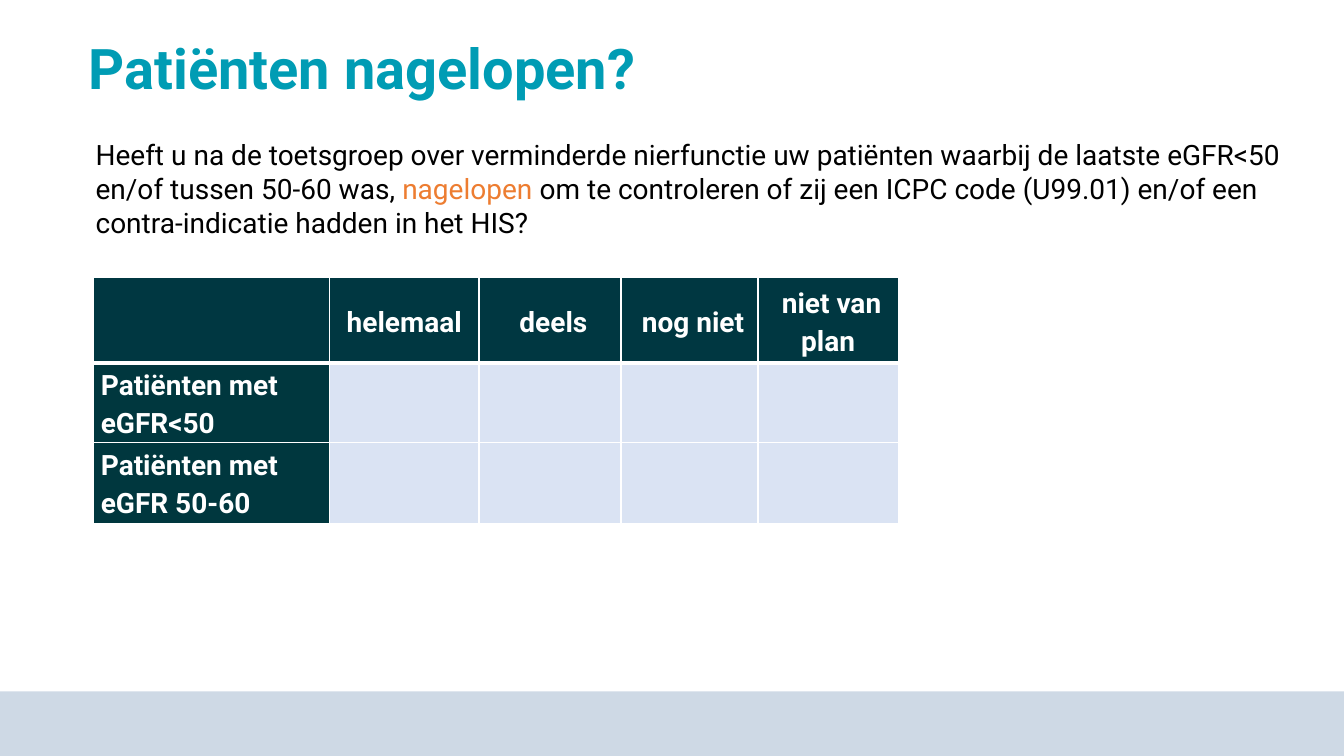
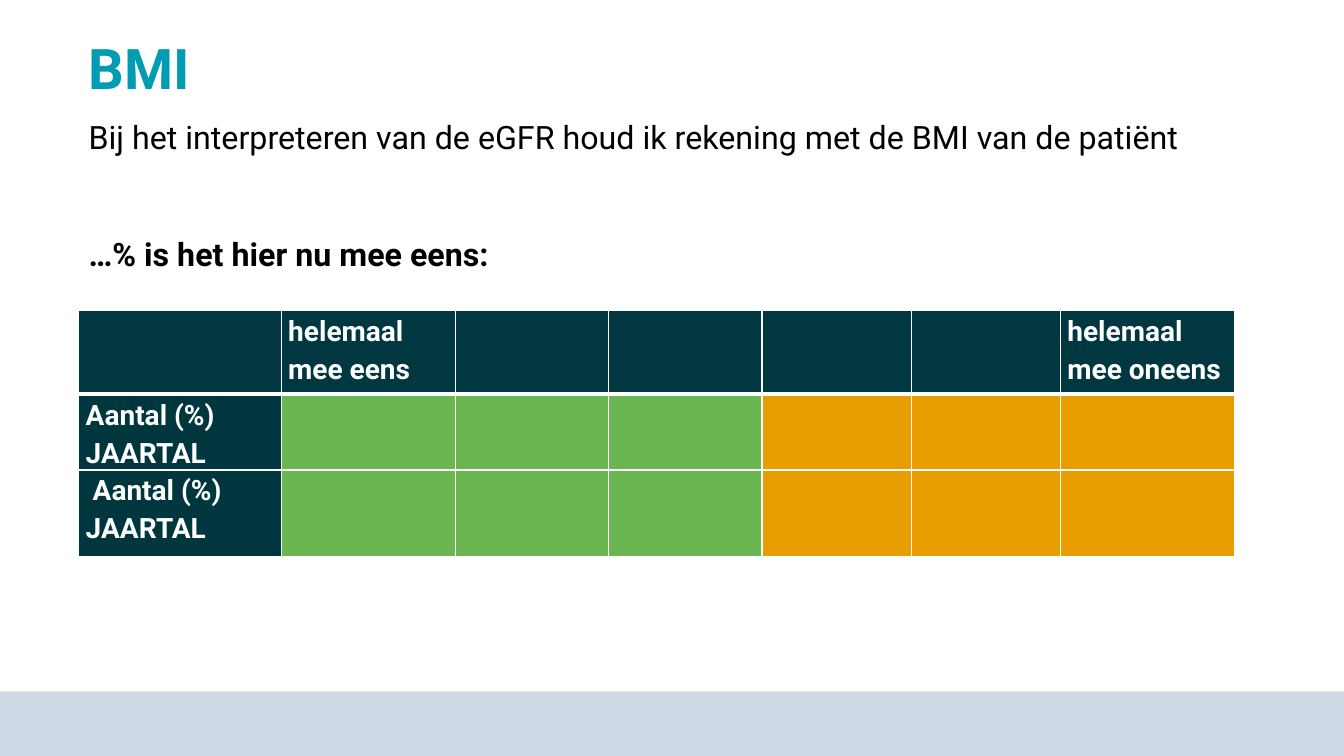
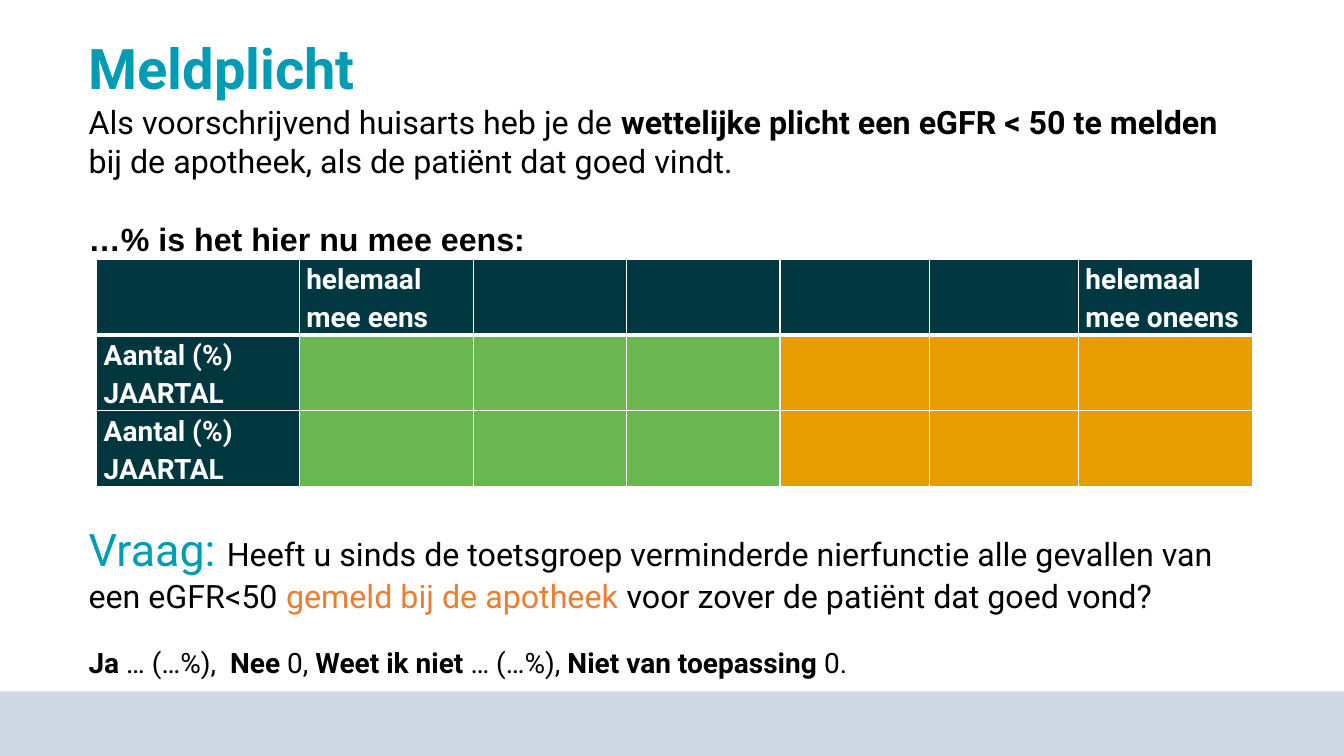
from pptx import Presentation
from pptx.dml.color import RGBColor as RGB
from pptx.enum.shapes import MSO_SHAPE as SHAPE
from pptx.enum.text import MSO_ANCHOR as ANCHOR, MSO_AUTO_SIZE as AUTO_SIZE, PP_ALIGN as ALIGN
from pptx.oxml import parse_xml
from pptx.oxml.ns import nsdecls
from pptx.util import Pt

COLORS = {
    "title": "009CB4", "band": "CED9E5", "header": "003741", "row_label": "00373E",
    "empty": "DAE3F3", "agree": "6AB650", "disagree": "E89E00",
    "accent": "ED7D31", "text": "000000", "white": "FFFFFF",
}
TITLE = {"size": Pt(40), "bold": True, "color": "title"}
CELL = {"size": Pt(20), "bold": True, "color": "white"}
BODY = {"size": Pt(23)}
SMALL = {"size": Pt(20)}
BOLD = {"bold": True}
ACCENT = {"color": "accent"}

# Shared parts of the tables
SCALE_WIDTHS = [144.7, 124.6, 109.4, 109.4, 106.6, 106.6, 124.6]
SCALE_HEADER = ["", "helemaal mee eens", "", "", "", "", "helemaal mee oneens"]
SCALE_FILLS = ["agree"] * 3 + ["disagree"] * 3
COUNT_LABEL = "Aantal (%)\nJAARTAL"

# Each text block: place, anchor, base format, paragraphs of (space before, runs)
SLIDES = [
    {
        "title": "Patiënten nagelopen?",
        "table": {
            "at": (67, 198), "widths": [168.5, 106.6, 101.5, 97.9, 100.1],
            "heights": [61.2, 56.9, 57.6], "anchor": ANCHOR.MIDDLE, "header_align": ALIGN.CENTER,
            "header": ["", "helemaal", " deels", " nog niet", " niet van plan"],
            "labels": ["Patiënten met eGFR<50", "Patiënten met eGFR 50-60"],
            "fills": ["empty"] * 4,
        },
        "texts": [((61.2, 95, 863.3, 80), ANCHOR.TOP, SMALL, [
            (0, [("Heeft u na de toetsgroep over verminderde nierfunctie uw patiënten waarbij de "
                  "laatste eGFR<50 en/of tussen 50-60 was, ", {}),
                 ("nagelopen ", ACCENT),
                 ("om te controleren of zij een ICPC code (U99.01) en/of een contra-indicatie "
                  "hadden in het HIS?", {})]),
        ])],
    },
    {
        "title": "BMI",
        "table": {
            "at": (56.2, 221.8), "widths": SCALE_WIDTHS, "heights": [59.8, 51.1, 61.9],
            "anchor": ANCHOR.TOP, "header_align": ALIGN.LEFT, "header": SCALE_HEADER,
            "labels": [COUNT_LABEL, " " + COUNT_LABEL], "fills": SCALE_FILLS,
        },
        "texts": [((56.2, 79.9, 825.1, 118.8), ANCHOR.MIDDLE, BODY, [
            (0, [("Bij het interpreteren van de eGFR houd ik rekening met de BMI van de patiënt", {})]),
            (56, [("…% is het hier nu mee eens:", BOLD)]),
        ])],
    },
    {
        "title": "Meldplicht",
        "table": {
            "at": (69.1, 185), "widths": SCALE_WIDTHS, "heights": [49.7] * 3,
            "anchor": ANCHOR.TOP, "header_align": ALIGN.LEFT, "header": SCALE_HEADER,
            "labels": [COUNT_LABEL] * 2, "fills": SCALE_FILLS,
        },
        "texts": [
            ((56.2, 69.1, 838.1, 118.8), ANCHOR.MIDDLE, BODY, [
                (0, [("Als voorschrijvend huisarts heb je de ", {}),
                     ("wettelijke plicht een eGFR < 50 te melden ", BOLD),
                     ("bij de apotheek, als de patiënt dat goed vindt.", {})]),
                (28, [("…% is het hier nu mee eens:", {"name": "Arial", "bold": True})]),
            ]),
            ((56.2, 369.4, 838.1, 120.2), ANCHOR.TOP, BODY, [
                (0, [("Vraag: ", {"size": Pt(32), "color": "title"}),
                     ("Heeft u sinds de toetsgroep verminderde nierfunctie alle gevallen van "
                      "een eGFR<50 ", {}),
                     ("gemeld bij de apotheek ", ACCENT),
                     ("voor zover de patiënt dat goed vond?", {})]),
                (22, [("Ja", SMALL | BOLD), (" … (…%),  ", SMALL),
                      ("Nee", SMALL | BOLD), (" 0, ", SMALL),
                      ("Weet ik niet ", SMALL | BOLD), ("… (…%), ", SMALL),
                      ("Niet van toepassing", SMALL | BOLD), (" 0.", SMALL)]),
            ]),
        ],
    },
]


def add_run(paragraph, text, style):
    run = paragraph.add_run()
    run.text = text
    values = {"name": "Roboto", "bold": False, "color": "text"} | style
    run.font.color.rgb = RGB.from_string(COLORS[values.pop("color")])
    for attribute, value in values.items():
        setattr(run.font, attribute, value)


def format_cell(cell, text, fill, anchor, align, edges):
    properties = cell._tc.get_or_add_tcPr()
    for side, width in edges.items():
        properties.append(parse_xml(
            f'<a:ln{side} {nsdecls("a")} w="{Pt(width)}"><a:solidFill>'
            f'<a:srgbClr val="{COLORS["white"]}"/></a:solidFill></a:ln{side}>'))
    cell.fill.solid()
    cell.fill.fore_color.rgb = RGB.from_string(COLORS[fill])
    cell.margin_left = cell.margin_right = Pt(5)
    cell.margin_top = cell.margin_bottom = 0
    cell.vertical_anchor = anchor
    for index, line in enumerate(text.split("\n") if text else []):
        frame = cell.text_frame
        paragraph = frame.add_paragraph() if index else frame.paragraphs[0]
        paragraph.line_spacing = 1.15
        paragraph.alignment = align
        add_run(paragraph, line, CELL)


deck = Presentation()
deck.slide_width, deck.slide_height = Pt(960), Pt(540)
layout = deck.slide_layouts[5]

for number, content in enumerate(SLIDES):
    slide = deck.slides.add_slide(layout)

    # Footer band, placed once in the layout
    if number == 0:
        band = slide.shapes.add_shape(SHAPE.RECTANGLE, 0, Pt(493.9), Pt(960), Pt(46.1))
        band.shadow.inherit = False
        band.fill.solid()
        band.fill.fore_color.rgb = RGB.from_string(COLORS["band"])
        band.line.fill.background()
        layout.shapes.element.insert(2, band.element)

    # Title
    title = slide.shapes.title
    title.left, title.top, title.width, title.height = map(Pt, (56.2, 25.9, 769, 51.1))
    title.text_frame.vertical_anchor = ANCHOR.TOP
    title.text_frame.auto_size = AUTO_SIZE.NONE
    heading = title.text_frame.paragraphs[0]
    heading.alignment = ALIGN.LEFT
    heading.line_spacing = 0.9
    add_run(heading, content["title"], TITLE)

    # Answer table
    answers = content["table"]
    widths, heights = answers["widths"], answers["heights"]
    grid = slide.shapes.add_table(len(heights), len(widths), *map(Pt, answers["at"]),
                                  Pt(sum(widths)), Pt(sum(heights))).table
    grid.horz_banding = False
    for column, width in zip(grid.columns, widths):
        column.width = Pt(width)
    rows = [answers["header"]] + [[label] + [""] * (len(widths) - 1) for label in answers["labels"]]
    for r, texts in enumerate(rows):
        grid.rows[r].height = Pt(heights[r])
        fills = ["row_label"] + answers["fills"] if r else ["header"] * len(widths)
        edges = {"L": 1, "R": 1, "T": 3 if r == 1 else 1, "B": 1 if r else 3}
        align = ALIGN.LEFT if r else answers["header_align"]
        for c, text in enumerate(texts):
            format_cell(grid.cell(r, c), text, fills[c], answers["anchor"], align, edges)

    # Statements and questions
    for place, anchor, base, paragraphs in content["texts"]:
        frame = slide.shapes.add_textbox(*map(Pt, place)).text_frame
        frame.word_wrap = True
        frame.vertical_anchor = anchor
        for index, (space, runs) in enumerate(paragraphs):
            paragraph = frame.add_paragraph() if index else frame.paragraphs[0]
            if space:
                paragraph.space_before = Pt(space)
            for text, style in runs:
                add_run(paragraph, text, base | style)

deck.save("out.pptx")
